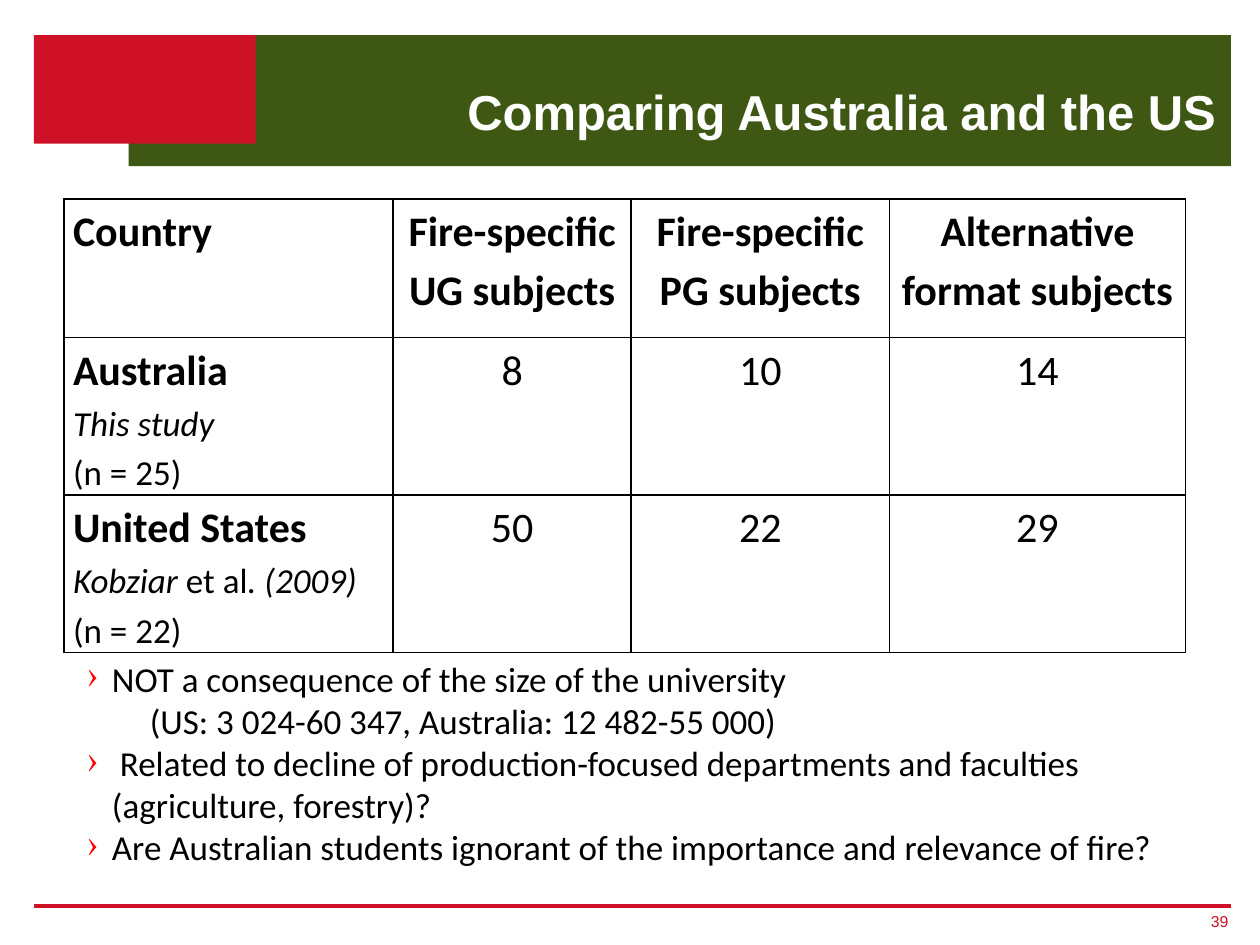
from lxml import etree
from pptx import Presentation
from pptx.dml.color import RGBColor
from pptx.enum.shapes import MSO_CONNECTOR, MSO_SHAPE
from pptx.enum.text import MSO_ANCHOR, MSO_AUTO_SIZE, PP_ALIGN
from pptx.oxml.ns import qn
from pptx.util import Inches, Pt

RECTANGLE = MSO_SHAPE.RECTANGLE
STRAIGHT = MSO_CONNECTOR.STRAIGHT
LEFT, CENTER, RIGHT = PP_ALIGN.LEFT, PP_ALIGN.CENTER, PP_ALIGN.RIGHT
BOTTOM, MIDDLE = MSO_ANCHOR.BOTTOM, MSO_ANCHOR.MIDDLE
NO_FIT, GROW = MSO_AUTO_SIZE.NONE, MSO_AUTO_SIZE.SHAPE_TO_FIT_TEXT

GREEN, RED, BULLET_RED = "3E5712", "CE1126", "FF0000"
BLACK, WHITE = "000000", "FFFFFF"

COLUMNS = [2.61, 1.89, 2.05, 2.35]
ROWS = [1.1, 1.25, 1.25]
HEADINGS = ["Country", "Fire-specific UG subjects",
            "Fire-specific PG subjects", "Alternative format subjects"]
# Country, source as (text, italic) spans, sample size, counts
COUNTRIES = [
    ("Australia", [("This study", True)], "(n = 25)", [8, 10, 14]),
    ("United States", [("Kobziar ", True), ("et al", False), (". (2009)", True)],
     "(n = 22)", [50, 22, 29]),
]
# Text, has a bullet
POINTS = [
    ("NOT a consequence of the size of the university", True),
    ("(US: 3 024-60 347, Australia: 12 482-55 000)", False),
    (" Related to decline of production-focused departments and faculties "
     "(agriculture, forestry)?", True),
    ("Are Australian students ignorant of the importance and relevance of fire?", True),
]


def colour(value):
    return RGBColor.from_string(value)


def inches(box):
    return [Inches(length) for length in box]


def style(font, size, value, name="Calibri", bold=False, italic=False):
    font.size, font.name, font.bold, font.italic = Pt(size), name, bold, italic
    font.color.rgb = colour(value)


def add_child(parent, tag, **attributes):
    return etree.SubElement(parent, qn(tag), attributes)


def set_margins(target, side, upright):
    target.margin_left = target.margin_right = Inches(side)
    target.margin_top = target.margin_bottom = Inches(upright)


def add_block(page, box, value):
    block = page.shapes.add_shape(RECTANGLE, *inches(box))
    block.shadow.inherit = False
    block.fill.solid()
    block.fill.fore_color.rgb = colour(value)
    block.line.fill.background()


def add_header(page, box, text):
    left, top, width, height = box
    tab = 1.76
    overhang = 0.75
    add_block(page, (left + overhang, top, width - overhang, height), GREEN)
    add_block(page, (left, top, tab, 0.86), RED)

    title = page.shapes.title
    title.left, title.top, title.width, title.height = inches(
        (left + tab, top + 0.19, width - tab - 0.02, 0.69))
    frame = title.text_frame
    frame.text = text
    frame.auto_size, frame.vertical_anchor = NO_FIT, BOTTOM
    para = frame.paragraphs[0]
    para.alignment, para.line_spacing = RIGHT, Pt(25)
    style(para.font, 28, WHITE, "Arial", bold=True)


def add_footer(page, box, number):
    left, top, width, height = box
    rule = page.shapes.add_connector(STRAIGHT, *inches((left, top, left + width, top)))
    rule.line.color.rgb, rule.line.width = colour(RED), Pt(2.25)
    add_child(rule._element.spPr, "a:effectLst")

    label = page.shapes.add_textbox(
        *inches((left + width - 0.29, top + 0.01, 0.27, height)))
    frame = label.text_frame
    frame.text = number
    frame.vertical_anchor = MIDDLE
    set_margins(frame, 0, 0)
    para = frame.paragraphs[0]
    para.alignment = RIGHT
    style(para.font, 9, RED, "Arial")


def format_cell(cell):
    set_margins(cell, 0.07, 0)
    properties = cell._tc.get_or_add_tcPr()
    for side in ("a:lnL", "a:lnR", "a:lnT", "a:lnB"):
        border = add_child(properties, side, w=str(Pt(1)))
        add_child(add_child(border, "a:solidFill"), "a:srgbClr", val=BLACK)
    cell.fill.background()


def fill_cell(cell, lines, alignment=LEFT, after=None):
    """Each line is its spans as (text, italic), its size and whether it is bold."""
    format_cell(cell)
    frame = cell.text_frame
    for index, (spans, size, bold) in enumerate(lines):
        para = frame.add_paragraph() if index else frame.paragraphs[0]
        para.alignment, para.line_spacing = alignment, 1.15
        if after:
            para.space_after = Pt(after)
        style(para.font, size, BLACK, bold=bold, italic=spans[0][1])
        for text, italic in spans:
            span = para.add_run()
            span.text = text
            if len(spans) > 1:
                style(span.font, size, BLACK, bold=bold, italic=italic)


def add_comparison(page, left, top):
    box = (left, top, sum(COLUMNS), sum(ROWS))
    table = page.shapes.add_table(len(ROWS), len(COLUMNS), *inches(box)).table
    table.first_row = table.horz_banding = False
    for column, width in zip(table.columns, COLUMNS):
        column.width = Inches(width)
    for row, height in zip(table.rows, ROWS):
        row.height = Inches(height)

    for index, heading in enumerate(HEADINGS):
        fill_cell(table.cell(0, index), [([(heading, False)], 24, True)],
                  CENTER if index else LEFT)
    for row, (country, source, sample, counts) in enumerate(COUNTRIES, 1):
        fill_cell(table.cell(row, 0), [([(country, False)], 24, True),
                                       (source, 20, False),
                                       ([(sample, False)], 20, False)])
        for column, count in enumerate(counts, 1):
            fill_cell(table.cell(row, column), [([(str(count), False)], 24, False)],
                      CENTER, after=10)


def add_points(page, box):
    frame = page.shapes.add_textbox(*inches(box)).text_frame
    frame.word_wrap, frame.auto_size = True, GROW
    for index, (text, bulleted) in enumerate(POINTS):
        para = frame.add_paragraph() if index else frame.paragraphs[0]
        para.text = text
        para.level = 0 if bulleted else 1
        properties = para._p.get_or_add_pPr()
        properties.set("marL", str(Inches(0.2 if bulleted else 0.7)))
        properties.set("indent", str(Inches(-0.2)))
        if bulleted:
            add_child(add_child(properties, "a:buClr"), "a:srgbClr", val=BULLET_RED)
            add_child(properties, "a:buChar", char="›")
        else:
            add_child(properties, "a:buNone")
        style(para.font, 20, BLACK)


def main():
    deck = Presentation()
    deck.slide_width, deck.slide_height = Inches(10), Inches(7.5)
    page = deck.slides.add_slide(deck.slide_layouts[5])
    add_header(page, (0.27, 0.28, 9.5, 1.04), "Comparing Australia and the US")
    add_footer(page, (0.27, 7.19, 9.5, 0.23), "39")
    add_comparison(page, 0.51, 1.58)
    add_points(page, (0.59, 5.17, 8.75, 1.78))
    # The title lies in front of the header blocks
    page.shapes._spTree.append(page.shapes.title._element)
    deck.save("out.pptx")


if __name__ == "__main__":
    main()
